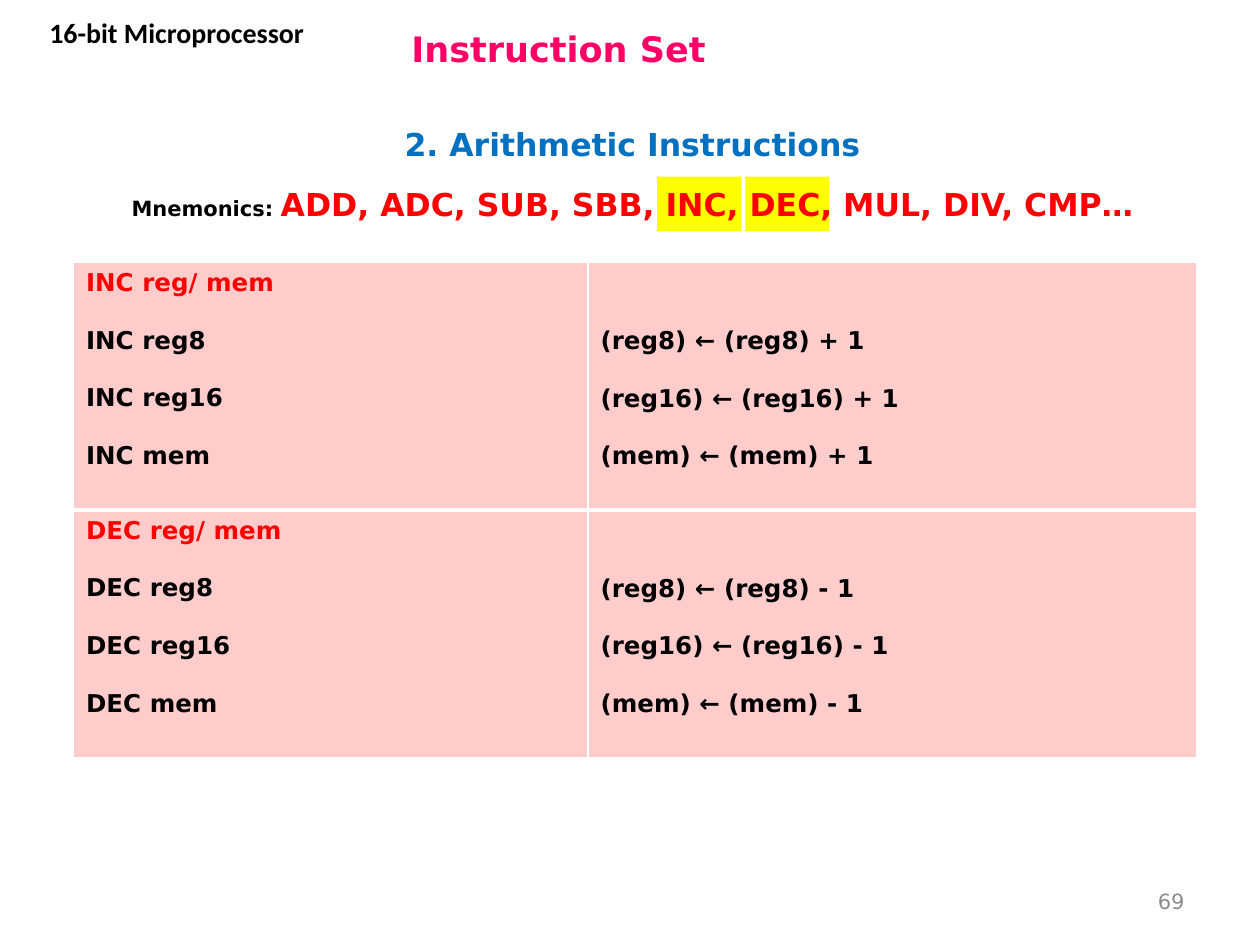
from lxml.etree import SubElement
from pptx import Presentation
from pptx.dml.color import RGBColor
from pptx.enum.shapes import MSO_SHAPE as Shape
from pptx.enum.text import MSO_ANCHOR as Anchor, PP_ALIGN as Align
from pptx.oxml.ns import qn
from pptx.util import Pt

BLACK = RGBColor(0x00, 0x00, 0x00)
WHITE = RGBColor(0xFF, 0xFF, 0xFF)
RED = RGBColor(0xFF, 0x00, 0x00)
PINK = RGBColor(0xFF, 0x00, 0x66)
BLUE = RGBColor(0x00, 0x70, 0xC0)
GRAY = RGBColor(0x8C, 0x8C, 0x8C)
YELLOW = RGBColor(0xFF, 0xFF, 0x00)
ROSE = RGBColor(0xFF, 0xCC, 0xCC)

ROW_HEIGHT = 141.5
LINE_GAP = 16.5
CELL_MARGIN = 3.6


class SlideBuilder:
    def __init__(self, slide, font_name="DejaVu Sans"):
        self.slide = slide
        self.font_name = font_name

    def add_run(self, paragraph, text, color, size, **overrides):
        run = paragraph.add_run()
        run.text = text
        font_format = {"name": self.font_name, "size": Pt(size), "bold": True}
        for name, value in (font_format | overrides).items():
            setattr(run.font, name, value)
        run.font.color.rgb = color

    def add_text(self, box, runs, align=Align.LEFT, anchor=Anchor.MIDDLE, **font):
        """Add a text box with one paragraph of (text, color, size) runs."""
        frame = self.slide.shapes.add_textbox(*map(Pt, box)).text_frame
        frame.word_wrap = True
        frame.vertical_anchor = anchor
        paragraph = frame.paragraphs[0]
        paragraph.alignment = align
        for text, color, size in runs:
            self.add_run(paragraph, text, color, size, **font)

    def add_highlight(self, *box):
        shape = self.slide.shapes.add_shape(Shape.RECTANGLE, *map(Pt, box))
        shape.shadow.inherit = False
        shape.fill.solid()
        shape.fill.fore_color.rgb = YELLOW
        shape.line.fill.background()

    def set_borders(self, cell, widths):
        """Draw white cell borders; widths maps a side (L, R, T, B) to points."""
        properties = cell._tc.get_or_add_tcPr()
        for position, (side, width) in enumerate(widths.items()):
            line = SubElement(properties, qn(f"a:ln{side}"), w=str(Pt(width)))
            fill = SubElement(line, qn("a:solidFill"))
            SubElement(fill, qn("a:srgbClr"), val=str(WHITE))
            properties.insert(position, line)

    def fill_cell(self, cell, lines, skipped_lines=0):
        """Write spaced (text, color) lines, starting skipped_lines down."""
        cell.fill.solid()
        cell.fill.fore_color.rgb = ROSE
        cell.margin_top = Pt(CELL_MARGIN + skipped_lines * LINE_GAP)
        frame = cell.text_frame
        for index, (text, color) in enumerate(lines):
            paragraph = frame.add_paragraph() if index else frame.paragraphs[0]
            if index:
                paragraph.space_before = Pt(LINE_GAP)
            self.add_run(paragraph, text, color, 14)

    def add_instruction_table(self, left, top, column_widths, instructions):
        row_count = len(instructions)
        table = self.slide.shapes.add_table(
            row_count, len(column_widths), Pt(left), Pt(top),
            Pt(sum(column_widths)), Pt(row_count * ROW_HEIGHT)).table
        table.first_row = table.horz_banding = False
        for column, width in zip(table.columns, column_widths):
            column.width = Pt(width)
        for index, (mnemonic, sign) in enumerate(instructions):
            table.rows[index].height = Pt(ROW_HEIGHT)
            operands = ("reg8", "reg16", "mem")
            forms = [(f"{mnemonic} reg/ mem", RED)]
            forms += [(f"{mnemonic} {operand}", BLACK) for operand in operands]
            effects = [(f"({operand}) ← ({operand}) {sign} 1", BLACK)
                       for operand in operands]
            self.fill_cell(table.cell(index, 0), forms)
            self.fill_cell(table.cell(index, 1), effects, skipped_lines=2)
            widths = {"L": 1, "R": 1, "T": 3 if index else 1,
                      "B": 1 if index == row_count - 1 else 3}
            for cell in table.rows[index].cells:
                self.set_borders(cell, widths)


def main():
    presentation = Presentation()
    presentation.slide_width = Pt(720)
    presentation.slide_height = Pt(540)
    slide = presentation.slides.add_slide(presentation.slide_layouts[6])
    builder = SlideBuilder(slide)

    for left in (426, 375.5):
        builder.add_highlight(left, 101, 48, 31)
    builder.add_text((21, 67, 681, 31), [("2. Arithmetic Instructions", BLUE, 18)],
                     Align.CENTER)
    builder.add_text((228, 8.5, 474, 38), [("Instruction Set", PINK, 20)])
    builder.add_text((516, 500.5, 168, 29), [("69", GRAY, 12)], Align.RIGHT, bold=False)
    builder.add_text((5, 5.5, 192, 46), [("16-bit Microprocessor", BLACK, 16)],
                     Align.CENTER, Anchor.TOP, name="Calibri")
    builder.add_text((21, 102, 681, 29),
                     [("Mnemonics: ", BLACK, 12),
                      ("ADD, ADC, SUB, SBB, INC, DEC, MUL, DIV, CMP…", RED, 18)],
                     Align.CENTER, Anchor.TOP)
    builder.add_instruction_table(42, 150, (294, 348), [("INC", "+"), ("DEC", "-")])

    presentation.save("out.pptx")


if __name__ == "__main__":
    main()
